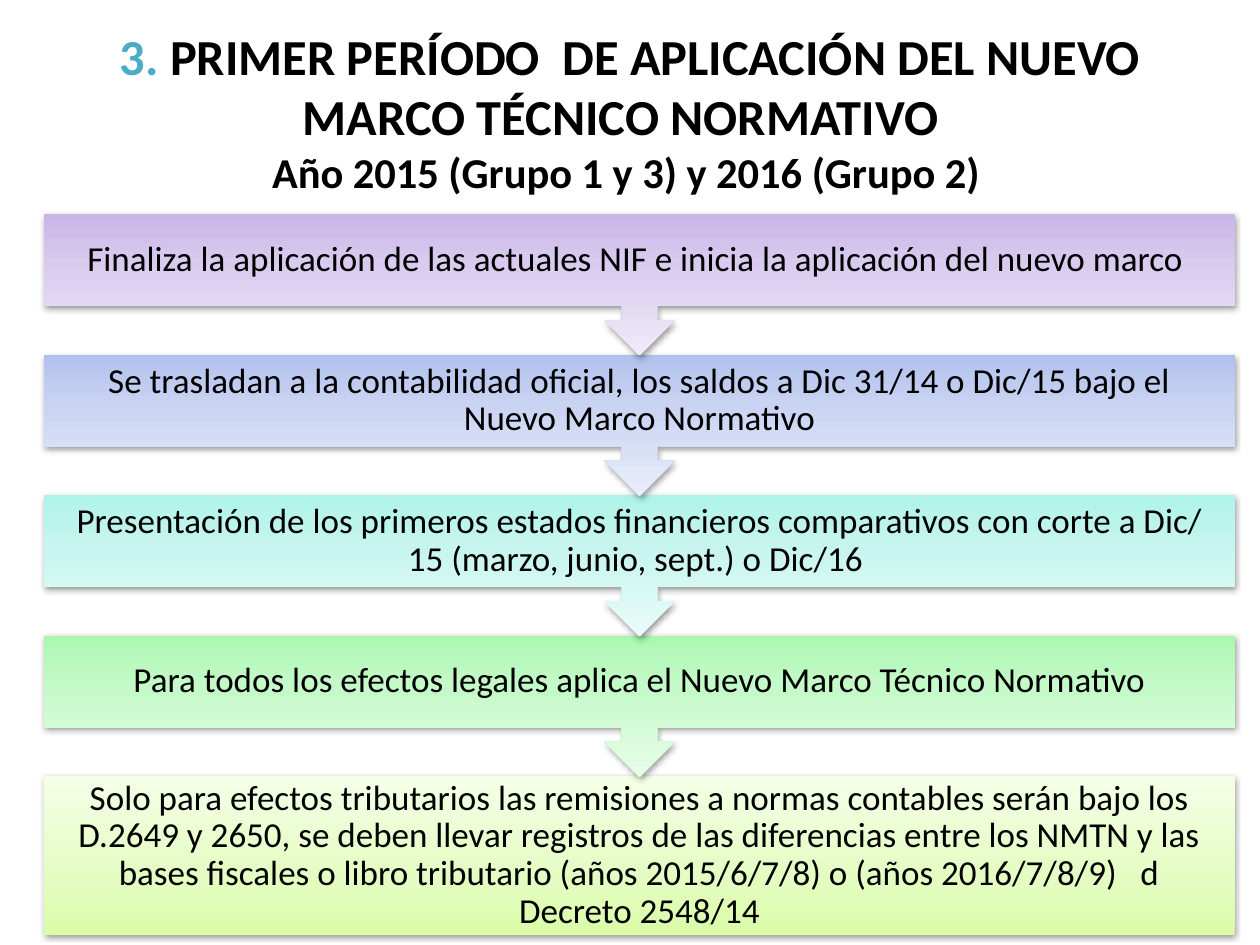
from lxml import etree
from pptx import Presentation
from pptx.dml.color import RGBColor
from pptx.enum.shapes import MSO_SHAPE
from pptx.enum.text import MSO_ANCHOR, MSO_AUTO_SIZE, PP_ALIGN
from pptx.oxml import parse_xml
from pptx.util import Inches, Pt

RECT, CALLOUT = MSO_SHAPE.RECTANGLE, MSO_SHAPE.UP_ARROW_CALLOUT
MIDDLE, CENTER, NO_FIT = MSO_ANCHOR.MIDDLE, PP_ALIGN.CENTER, MSO_AUTO_SIZE.NONE
NS = "http://schemas.openxmlformats.org/drawingml/2006/main"
LEFT, TOP, WIDTH, PITCH = 0.35, 1.7, 9.45, 1.115
STEP_H, BAR_H, LAST_H = 1.12, 0.73, 1.26

TITLE = [
    (" ", 21.6, "4BACC6"),
    ("3. ", 28.8, "4BACC6"),
    ("PRIMER PERÍODO  DE APLICACIÓN DEL NUEVO MARCO TÉCNICO NORMATIVO ", 28.8, "000000"),
    None,
    ("Año 2015 (Grupo 1 y 3) y 2016 (Grupo 2)", 24.3, "000000"),
]
STEPS = [
    ("Finaliza la aplicación de las actuales NIF e inicia la aplicación del nuevo marco ",
     ("C9B5E8", "D8CBEE", "F0EAF9")),
    ("Se trasladan a la contabilidad oficial, los saldos a Dic 31/14 o Dic/15 bajo el "
     "Nuevo Marco Normativo",
     ("B1C1ED", "C9D3F2", "E9EEFB")),
    ("Presentación de los primeros estados financieros comparativos con corte a Dic/ 15 "
     "(marzo, junio, sept.) o Dic/16 ",
     ("AEF3E9", "C6F5EE", "E8FCF9")),
    ("Para todos los efectos legales aplica el Nuevo Marco Técnico Normativo",
     ("AAF8B0", "C4F9C8", "E7FEE9")),
    ("Solo para efectos tributarios las remisiones a normas contables serán bajo los "
     "D.2649 y 2650, se deben llevar registros de las diferencias entre los NMTN y las "
     "bases fiscales o libro tributario (años 2015/6/7/8) o (años 2016/7/8/9)   d "
     "Decreto 2548/14",
     ("DAFDA7", "E4FCC2", "F5FFE7")),
]


def rgb(value):
    """Turn a hex string into a colour."""
    return RGBColor.from_string(value)


class Deck:
    """Hold the style and the current slide."""

    font = "Calibri"
    ink = "000000"
    frame = {"word_wrap": True, "auto_size": NO_FIT, "vertical_anchor": MIDDLE}
    insets = {f"margin_{side}": Inches(0.16) for side in ("left", "top", "right", "bottom")}

    def __init__(self, prs):
        """Start a title-only slide."""
        self.s = prs.slides.add_slide(prs.slide_layouts[5])

    def apply(self, target, values):
        """Set attributes from a dict."""
        for name, value in values.items():
            setattr(target, name, value)

    def run(self, p, text, size, color, bold=False):
        """Add a formatted run."""
        r = p.add_run()
        r.text = text
        self.apply(r.font, {"name": self.font, "size": Pt(size), "bold": bold})
        r.font.color.rgb = rgb(color)

    def title(self, parts, *box):
        """Fill the title placeholder; None breaks the line."""
        sp = self.s.shapes.title
        self.apply(sp, dict(zip(("left", "top", "width", "height"), map(Inches, box))))
        self.apply(sp.text_frame, self.frame)
        p = sp.text_frame.paragraphs[0]
        p.alignment = CENTER
        for part in parts:
            if part:
                self.run(p, *part, bold=True)
            else:
                p.add_line_break()

    def block(self, kind, colors, *box, rotation=0):
        """Add a shape with a vertical gradient and a soft shadow."""
        sp = self.s.shapes.add_shape(kind, *map(Inches, box))
        sp.rotation = rotation
        sp.line.fill.background()
        sp.shadow.inherit = False
        stops = "".join(f'<a:gs pos="{pos}"><a:srgbClr val="{color}"/></a:gs>'
                        for pos, color in zip((0, 35000, 100000), colors))
        grad = parse_xml(f'<a:gradFill xmlns:a="{NS}" rotWithShape="1"><a:gsLst>{stops}</a:gsLst>'
                         '<a:lin ang="16200000" scaled="1"/></a:gradFill>')
        sp.element.spPr.find(f"{{{NS}}}prstGeom").addnext(grad)
        shadow = etree.SubElement(
            sp.element.spPr.find(f"{{{NS}}}effectLst"), f"{{{NS}}}outerShdw",
            blurRad=str(Pt(3.1)), dist=str(Pt(1.6)), dir="5400000", rotWithShape="0")
        color = etree.SubElement(shadow, f"{{{NS}}}srgbClr", val=self.ink)
        etree.SubElement(color, f"{{{NS}}}alpha", val="38000")

    def text(self, text, *box):
        """Add a centred text box."""
        tf = self.s.shapes.add_textbox(*map(Inches, box)).text_frame
        self.apply(tf, {**self.frame, **self.insets})
        p = tf.paragraphs[0]
        self.apply(p, {"alignment": CENTER, "line_spacing": 0.9})
        self.run(p, text, 20, self.ink)


def main():
    """Build the slide."""
    prs = Presentation()
    prs.slide_width, prs.slide_height = Inches(10), Inches(7.5)
    deck = Deck(prs)
    deck.title(TITLE, 0.13, 0.22, 9.68, 1.32)
    last = len(STEPS) - 1
    for i, (text, colors) in reversed(list(enumerate(STEPS))):
        top = TOP + i * PITCH
        if i == last:
            deck.block(RECT, colors, LEFT, top, WIDTH, LAST_H)
        else:
            deck.block(CALLOUT, colors, LEFT, top, WIDTH, STEP_H, rotation=180)
        deck.text(text, LEFT, top, WIDTH, LAST_H if i == last else BAR_H)
    prs.save("out.pptx")


if __name__ == "__main__":
    main()
